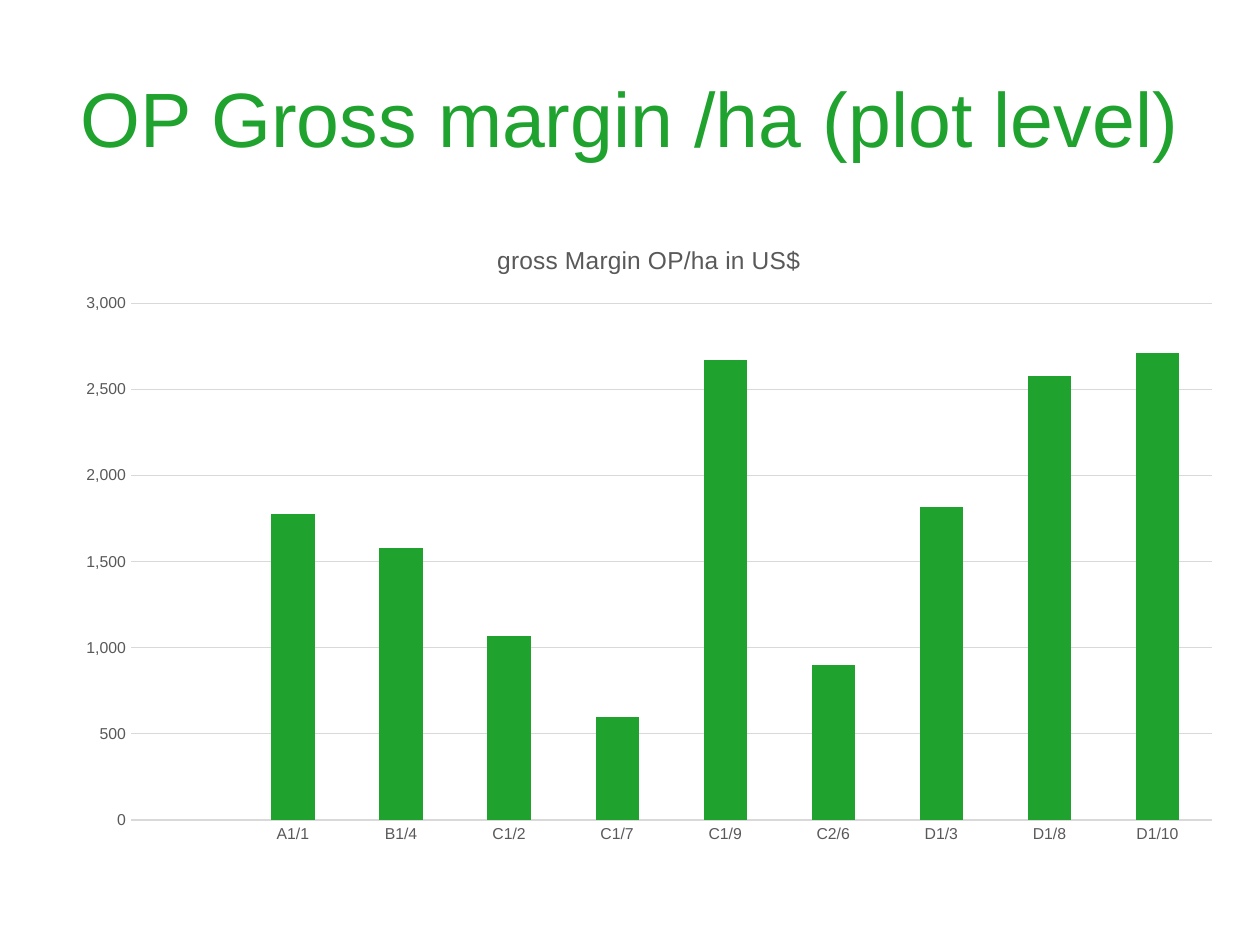
from pptx import Presentation
from pptx.chart.data import CategoryChartData as Data
from pptx.dml.color import RGBColor
from pptx.enum.chart import XL_CHART_TYPE as Kind, XL_TICK_MARK as Tick
from pptx.enum.text import MSO_ANCHOR as Anchor, PP_ALIGN as Align
from pptx.util import Pt

HEAD = "OP Gross margin /ha (plot level)"
NAME = "gross Margin OP/ha in US$"
PLOTS = [
    ("", None), ("A1/1", 1780), ("B1/4", 1580), ("C1/2", 1070), ("C1/7", 600),
    ("C1/9", 2670), ("C2/6", 900), ("D1/3", 1820), ("D1/8", 2580), ("D1/10", 2710),
]
GREEN, GREY, PALE = "1FA22E", "595959", "D9D9D9"
SIZE = (1260, 945)
HEAD_BOX = (63, 38, 1134, 157)
CHART_BOX = (63, 220, 1172, 636)
SCALE = 914400 / 126


def px(*nums):
    return [round(n * SCALE) for n in nums]


def style(font, size, color):
    font.name = "Arial"
    font.size = Pt(size)
    font.bold = False
    font.color.rgb = RGBColor.from_string(color)


def add_head(slide):
    head = slide.shapes.title
    head.left, head.top, head.width, head.height = px(*HEAD_BOX)
    frame = head.text_frame
    frame.text = HEAD
    frame.word_wrap = True
    frame.vertical_anchor = Anchor.MIDDLE
    para = frame.paragraphs[0]
    para.alignment = Align.CENTER
    style(para.runs[0].font, 44, GREEN)


def add_bars(slide):
    data = Data(number_format="#,##0")
    data.categories = [plot for plot, _ in PLOTS]
    data.add_series(NAME, [val for _, val in PLOTS])
    chart = slide.shapes.add_chart(Kind.COLUMN_CLUSTERED, *px(*CHART_BOX), data).chart
    style(chart.font, 10, "000000")
    chart.has_legend = False

    chart.has_title = True
    title = chart.chart_title
    title.include_in_layout = False
    title.text_frame.text = NAME
    style(title.text_frame.paragraphs[0].runs[0].font, 14, GREY)

    for axis in (chart.category_axis, chart.value_axis):
        axis.major_tick_mark = axis.minor_tick_mark = Tick.NONE
        axis.format.line.fill.background()
        style(axis.tick_labels.font, 9, GREY)

    axis = chart.value_axis
    axis.minimum_scale, axis.maximum_scale, axis.major_unit = 0, 3000, 500
    axis.tick_labels.number_format = "#,##0"
    axis.tick_labels.number_format_is_linked = False
    grid = axis.major_gridlines.format.line
    grid.width = Pt(0.75)
    grid.color.rgb = RGBColor.from_string(PALE)

    plot = chart.plots[0]
    plot.gap_width = 150
    plot.vary_by_categories = False
    fill = plot.series[0].format.fill
    fill.solid()
    fill.fore_color.rgb = RGBColor.from_string(GREEN)


def main():
    deck = Presentation()
    deck.slide_width, deck.slide_height = px(*SIZE)
    slide = deck.slides.add_slide(deck.slide_layouts[5])
    add_head(slide)
    add_bars(slide)
    deck.save("out.pptx")


if __name__ == "__main__":
    main()
